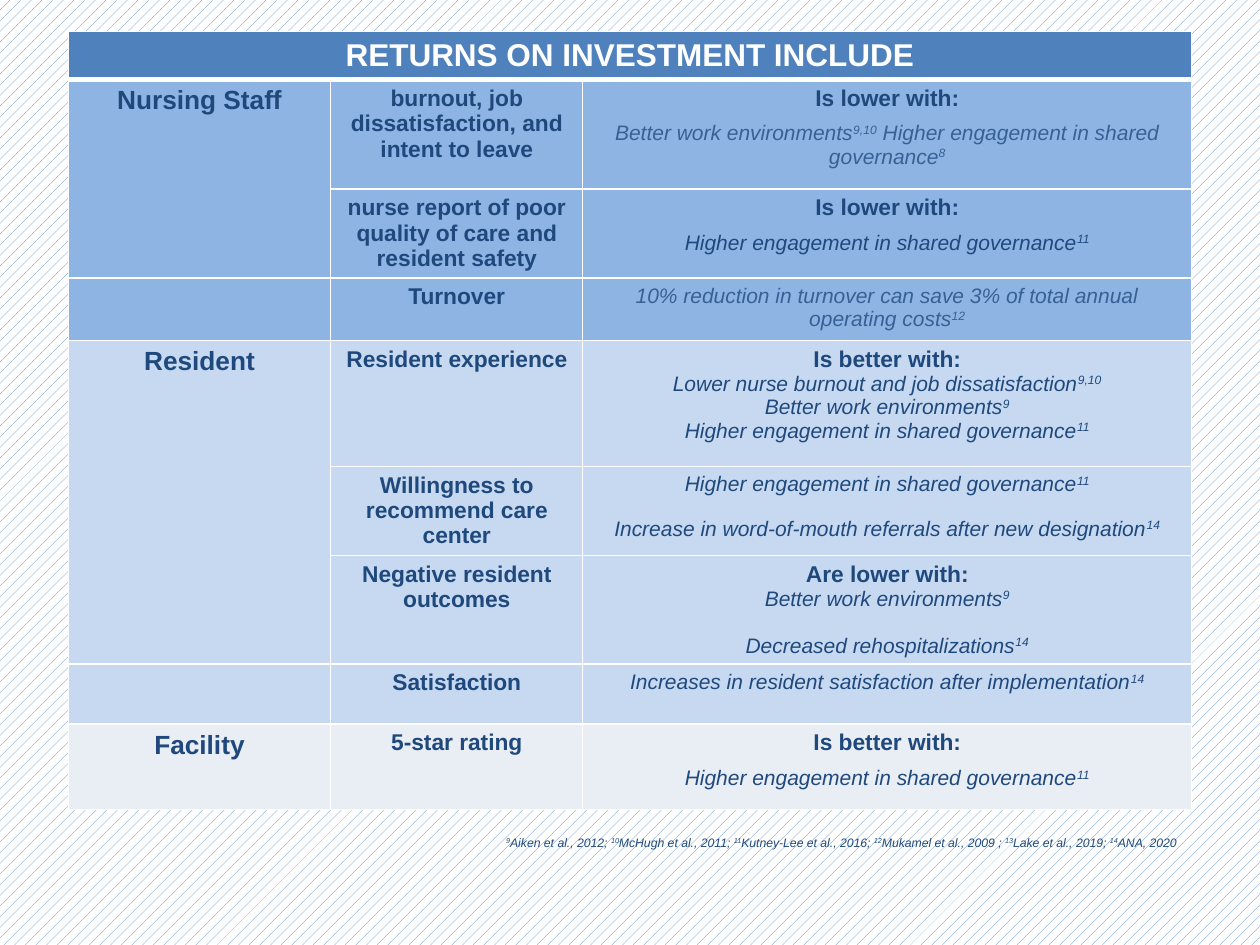
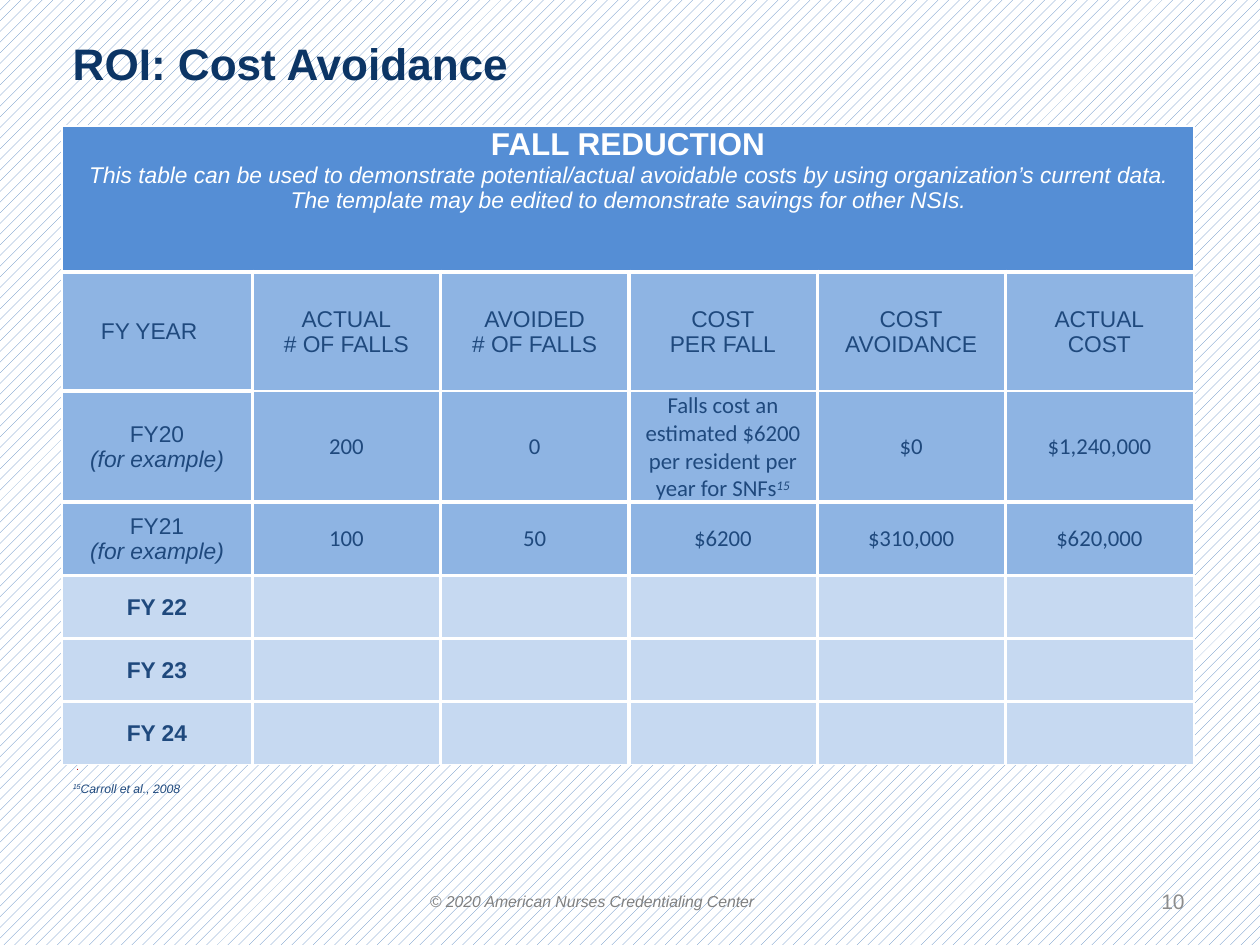
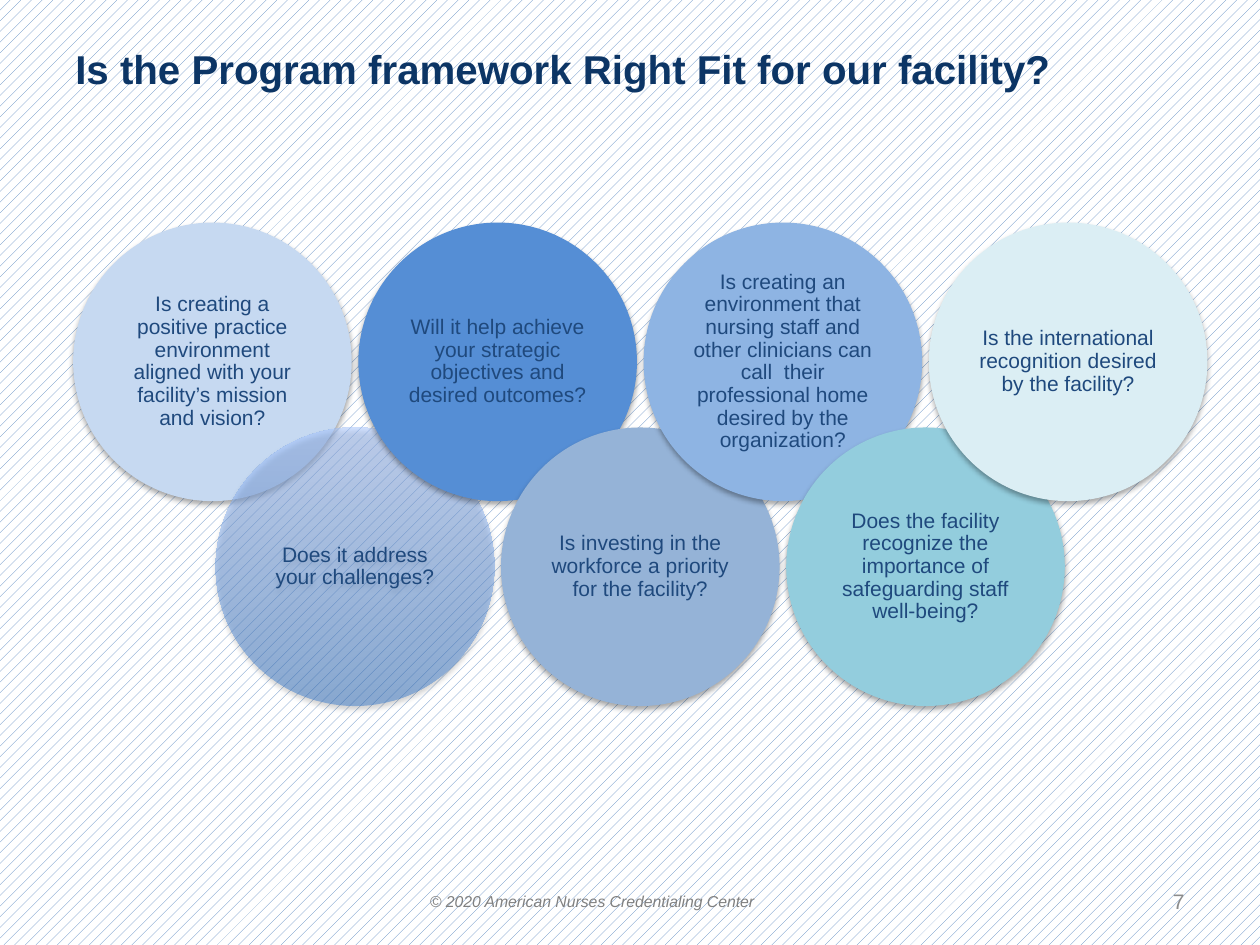
from dataclasses import dataclass

from lxml import etree
from pptx import Presentation
from pptx.dml.color import RGBColor as RGB
from pptx.enum.dml import MSO_PATTERN as PATTERN
from pptx.enum.shapes import MSO_SHAPE as SHAPE
from pptx.enum.text import MSO_ANCHOR as ANCHOR, PP_ALIGN as ALIGN
from pptx.oxml.ns import qn
from pptx.util import Pt


@dataclass(frozen=True)
class Theme:
    font: str = "Arial"
    number_font: str = "Calibri"
    title: str = "0C3565"
    text: str = "1F497D"
    soft_text: str = "376194"
    white: str = "FFFFFF"
    accent: str = "4F81BD"
    strong: str = "558ED5"
    medium: str = "8EB4E3"
    light: str = "C6D9F1"
    pale: str = "E9EDF4"
    steel: str = "95B3D7"
    aqua: str = "93CDDD"
    ice: str = "DBEEF4"
    fade_dark: str = "3F7FCE"
    fade_light: str = "A4C4FF"
    dot: str = "C00000"
    footer: str = "808080"
    number: str = "8C8C8C"
    band_size: float = 18
    group_size: float = 15
    cell_size: float = 13
    body_size: float = 12
    footer_size: float = 9
    note_size: float = 7


T = Theme()


def write(tf, paras, size=T.body_size, color=T.text, font=T.font, bold=False,
          italic=False, align=ALIGN.CENTER, before=0, spacing=None,
          anchor=ANCHOR.TOP):
    """Write paragraphs; ^marks^ are superscripts, (text, dict) overrides format."""
    tf.word_wrap = True
    tf.vertical_anchor = anchor
    base = dict(size=size, color=color, font=font, bold=bold, italic=italic,
                before=before)
    for i, para in enumerate(paras):
        content, extra = para if isinstance(para, tuple) else (para, {})
        f = {**base, **extra}
        p = tf.add_paragraph() if i else tf.paragraphs[0]
        p.alignment = align
        if i and f["before"]:
            p.space_before = Pt(f["before"])
        if spacing:
            p.line_spacing = spacing
        for j, part in enumerate(content.split("^")):
            if not part:
                continue
            r = p.add_run()
            r.text = part
            r.font.name, r.font.size = f["font"], Pt(f["size"])
            r.font.bold, r.font.italic = f["bold"], f["italic"] or j % 2 == 1
            r.font.color.rgb = RGB.from_string(f["color"])
            if j % 2:
                r.font._element.set("baseline", "30000")


def paint(cell, fill, left, right, top, bottom):
    """Give a cell white borders of the stated widths and a solid fill."""
    tc_pr = cell._tc.get_or_add_tcPr()
    for side, width in zip("LRTB", (left, right, top, bottom)):
        ln = etree.SubElement(tc_pr, qn(f"a:ln{side}"), w=str(Pt(width)))
        solid = etree.SubElement(ln, qn("a:solidFill"))
        etree.SubElement(solid, qn("a:srgbClr"), val=T.white)
    cell.fill.solid()
    cell.fill.fore_color.rgb = RGB.from_string(fill)


prs = Presentation()
prs.slide_width, prs.slide_height = Pt(720), Pt(540)

# Shared parts: background, title, footer and page number
PAGES = [
    None,
    ("ROI: Cost Avoidance", 25.2, 34.5, 17.3, "10"),
    ("Is the Program framework Right Fit for our facility?", 23, 36, 21.6, "7"),
]
slides = []
for page in PAGES:
    s = prs.slides.add_slide(prs.slide_layouts[6])
    slides.append(s)
    bg = s.background.fill
    bg.patterned()
    bg.pattern = PATTERN.PERCENT_20
    bg.fore_color.rgb = RGB.from_string(T.accent)
    bg.back_color.rgb = RGB.from_string(T.white)
    if page is None:
        continue
    title, size, left, top, number = page
    tb = s.shapes.add_textbox(Pt(left), Pt(top), Pt(648), Pt(49))
    write(tb.text_frame, [title], size=size, color=T.title, bold=True,
          align=ALIGN.LEFT)
    tb = s.shapes.add_textbox(Pt(238.5), Pt(500.5), Pt(243), Pt(28.75))
    write(tb.text_frame, ["© 2020 American Nurses Credentialing Center"],
          size=T.footer_size, color=T.footer, italic=True, align=ALIGN.LEFT,
          anchor=ANCHOR.MIDDLE)
    tb = s.shapes.add_textbox(Pt(508.5), Pt(500.5), Pt(175.5), Pt(28.75))
    write(tb.text_frame, [number], color=T.number, align=ALIGN.RIGHT,
          anchor=ANCHOR.MIDDLE)
returns, costs, fit = slides

# Slide 1: table of returns
HEAD = dict(size=T.cell_size, bold=True, italic=False)
SOFT = dict(color=T.soft_text)
ENGAGED = "Higher engagement in shared governance^11^"
RETURNS = [  # group, fill, row height, measure, findings
    ("Nursing Staff", T.medium, 62.6,
     ["burnout, job dissatisfaction, and intent to leave"],
     [("Is lower with:", HEAD),
      ("Better work environments^9,10^ Higher engagement in shared governance^8^",
       dict(before=6, **SOFT))]),
    ("", T.medium, 50.6,
     ["nurse report of poor quality of care and", "resident safety"],
     [("Is lower with:", HEAD), (ENGAGED, dict(before=6))]),
    ("", T.medium, 35.7, ["Turnover"],
     [("10% reduction in turnover can save 3% of total annual operating costs^12^",
       SOFT)]),
    ("Resident", T.light, 72, ["Resident experience"],
     [("Is better with:", HEAD),
      "Lower nurse burnout and job dissatisfaction^9,10^",
      "Better work environments^9^", ENGAGED]),
    ("", T.light, 50.9, ["Willingness to recommend care center"],
     [ENGAGED, ("Increase in word-of-mouth referrals after new designation^14^",
                dict(before=12))]),
    ("", T.light, 61.7, ["Negative resident outcomes"],
     [("Are lower with:", HEAD), "Better work environments^9^",
      ("Decreased rehospitalizations^14^", dict(before=13.5))]),
    ("", T.light, 34.3, ["Satisfaction"],
     ["Increases in resident satisfaction after implementation^14^"]),
    ("Facility", T.pale, 49, ["5-star rating"],
     [("Is better with:", HEAD), (ENGAGED, dict(before=6))]),
]
table = returns.shapes.add_table(len(RETURNS) + 1, 3, Pt(39), Pt(18),
                                 Pt(642), Pt(444)).table
for col, width in zip(table.columns, (150, 144, 348)):
    col.width = Pt(width)
for row, height in zip(table.rows, [27.4] + [item[2] for item in RETURNS]):
    row.height = Pt(height)
for c in range(3):
    paint(table.cell(0, c), T.accent, 1, 1, 1, 3)
table.cell(0, 0).merge(table.cell(0, 2))
write(table.cell(0, 0).text_frame, ["RETURNS ON INVESTMENT INCLUDE"],
      size=T.band_size, color=T.white, bold=True)
for r, (group, fill, _, measure, findings) in enumerate(RETURNS, 1):
    for c in range(3):
        paint(table.cell(r, c), fill, 1, 1, 3 if r == 1 else 1, 1)
    if group:
        write(table.cell(r, 0).text_frame, [group], size=T.group_size, bold=True)
    write(table.cell(r, 1).text_frame, measure, size=T.cell_size, bold=True)
    write(table.cell(r, 2).text_frame, findings, italic=True)
for first, last in ((1, 2), (4, 6)):
    table.cell(first, 0).merge(table.cell(last, 0))

# Slide 2: table of avoided costs
tb = costs.shapes.add_textbox(Pt(36.7), Pt(430.6), Pt(647), Pt(55))
write(tb.text_frame, ["."], size=6, color=T.dot, italic=True, align=ALIGN.LEFT)

EXAMPLE = ("(for example)", dict(italic=True))
COSTS = [
    [["FY YEAR"], ["ACTUAL", "# OF FALLS"], ["AVOIDED", "# OF FALLS"],
     ["COST", "PER FALL"], ["COST", "AVOIDANCE"], ["ACTUAL", "COST"]],
    [["FY20", EXAMPLE], ["200"], ["0"],
     ["Falls cost an estimated $6200 per resident per year for SNFs^15^"],
     ["$0"], ["$1,240,000"]],
    [["FY21", EXAMPLE], ["100"], ["50"], ["$6200"], ["$310,000"], ["$620,000"]],
    [["FY 22"]], [["FY 23"]], [["FY 24"]],
]
COLS, LAST = 6, len(COSTS)
table = costs.shapes.add_table(LAST + 1, COLS, Pt(35.5), Pt(72),
                               Pt(648), Pt(364)).table
for c, col in enumerate(table.columns):
    col.width = Pt(107.6 if c else 108.8)
for row, height in zip(table.rows, (83.4, 68, 63.4, 42, 36, 36, 36)):
    row.height = Pt(height)
for c in range(COLS):
    paint(table.cell(0, c), T.strong, 1, 1, 1, 3)
band = table.cell(0, 0)
band.merge(table.cell(0, COLS - 1))
band.margin_top, band.margin_bottom = Pt(0.7), Pt(0)
band.margin_left = band.margin_right = Pt(5)
write(band.text_frame, [
    ("FALL REDUCTION", dict(size=T.band_size, bold=True, italic=False)),
    "This table can be used to demonstrate potential/actual avoidable costs by "
    "using organization’s current data. The template may be edited to "
    "demonstrate savings for other NSIs."],
    size=T.cell_size, color=T.white, italic=True)
for r, entries in enumerate(COSTS, 1):
    for c in range(COLS):
        cell = table.cell(r, c)
        thin_below = r == LAST or (r == 1 and c > 0)
        thin_above = r == 2 and c > 0
        paint(cell, T.medium if r <= 3 else T.light,
              2.25 if c else 1, 2.25 if c < COLS - 1 else 1,
              3 if r == 1 else 1 if thin_above else 2.25,
              1 if thin_below else 2.25)
        if c >= len(entries):
            continue
        cell.margin_left, cell.margin_top, cell.margin_bottom = Pt(5), Pt(0.7), Pt(0)
        cell.margin_right = Pt(14.4 if (r, c) == (1, 0) else 5.4)
        write(cell.text_frame, entries[c], size=T.cell_size, bold=r > 3,
              font=T.number_font if c and r > 1 else T.font)
        cell.vertical_anchor = ANCHOR.MIDDLE

# Source notes under both tables
NOTES = [
    (returns, 282.2, 473.8, 426,
     "^9^Aiken et al., 2012; ^10^McHugh et al., 2011; ^11^Kutney-Lee et al., 2016; "
     "^12^Mukamel et al., 2009 ; ^13^Lake et al., 2019; ^14^ANA, 2020"),
    (costs, 34.5, 442.8, 392, "^15^Carroll et al., 2008"),
]
for s, left, top, width, note in NOTES:
    tb = s.shapes.add_textbox(Pt(left), Pt(top), Pt(width), Pt(15.8))
    write(tb.text_frame, [note], size=T.note_size, italic=True, align=ALIGN.LEFT)

# Slide 3: overlapping circles, alternating between two rows
QUESTIONS = [
    (T.light, "Is creating a positive practice environment aligned with your "
              "facility’s mission and vision?"),
    (None, "Does it address your challenges?"),
    (T.strong, "Will it help achieve your strategic objectives and desired outcomes?"),
    (T.steel, "Is investing in the workforce a priority for the facility?"),
    (T.medium, "Is creating an environment that nursing staff and other clinicians "
               "can call  their professional home desired by the organization?"),
    (T.aqua, "Does the facility recognize the importance of safeguarding staff "
             "well-being?"),
    (T.ice, "Is the international recognition desired by the facility?"),
]
DIAMETER, STEP, TOPS = 159.2, 81.5, (127.2, 244.3)
for i, (fill, question) in enumerate(QUESTIONS):
    sp = fit.shapes.add_shape(SHAPE.OVAL, Pt(41.8 + i * STEP), Pt(TOPS[i % 2]),
                              Pt(DIAMETER), Pt(DIAMETER))
    sp.line.fill.background()
    if fill:
        sp.fill.solid()
        sp.fill.fore_color.rgb = RGB.from_string(fill)
    else:  # half-transparent gradient, dark at the bottom
        sp.fill.gradient()
        sp.fill.gradient_angle = 90
        for stop, color in zip(sp.fill.gradient_stops, (T.fade_dark, T.fade_light)):
            stop.color.rgb = RGB.from_string(color)
        for clr in sp._element.spPr.iter(qn("a:srgbClr")):
            etree.SubElement(clr, qn("a:alpha"), val="50000")
    # Soft shadow straight below
    sp.shadow.inherit = False
    effects = sp._element.spPr.find(qn("a:effectLst"))
    shadow = etree.SubElement(effects, qn("a:outerShdw"), blurRad=str(Pt(3.1)),
                              dist=str(Pt(1.8)), dir="5400000", rotWithShape="0")
    clr = etree.SubElement(shadow, qn("a:srgbClr"), val="000000")
    etree.SubElement(clr, qn("a:alpha"), val="35000")
    tf = sp.text_frame
    tf.margin_left = tf.margin_right = tf.margin_top = tf.margin_bottom = Pt(3.6)
    write(tf, [question], spacing=0.9, anchor=ANCHOR.MIDDLE)

prs.save("out.pptx")
